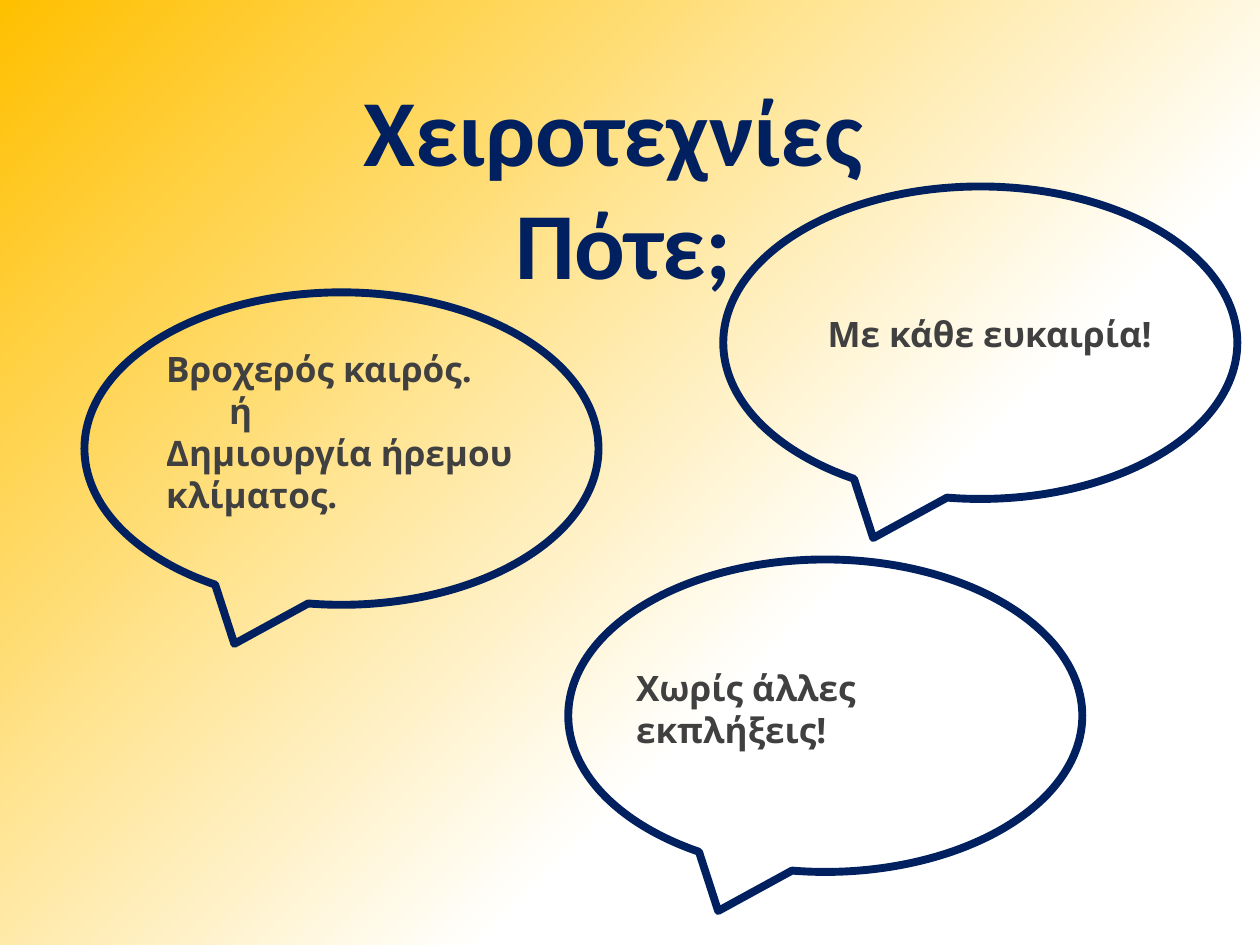
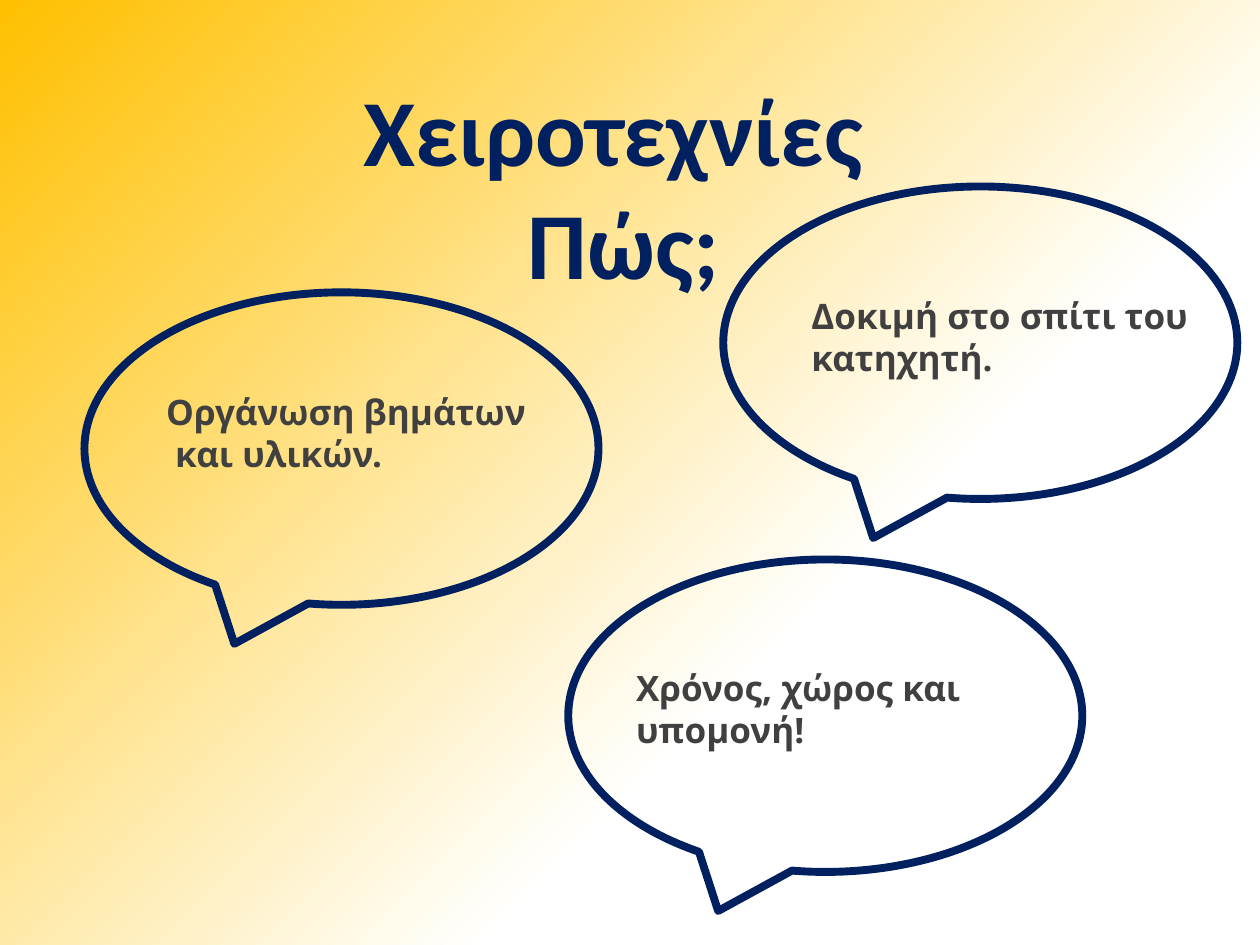
"""Builds two slides of speech bubbles on when and how to do crafts."""
from pptx import Presentation
from pptx.dml.color import RGBColor
from pptx.enum.shapes import MSO_SHAPE
from pptx.enum.text import MSO_ANCHOR, MSO_AUTO_SIZE, PP_ALIGN
from pptx.oxml import parse_xml
from pptx.oxml.ns import nsdecls, qn
from pptx.util import Inches, Pt

NAVY = RGBColor(0x00, 0x20, 0x60)
GREY = RGBColor(0x40, 0x40, 0x40)
WHITE = RGBColor(0xFF, 0xFF, 0xFF)
GOLD = RGBColor(0xFF, 0xC0, 0x00)

prs = Presentation()
prs.slide_width, prs.slide_height = Inches(10), Inches(7.5)
CELL = prs.slide_width / 100
BUBBLE_W, BUBBLE_H = 40.8, 24.8
TEXT_W, LINE_H = 35.2, 3.35
BUBBLES = [(57.4, 14.8), (6.7, 23.2), (45.1, 44.4)]

SLIDES = [
    ("Πότε;", [
        (7.3, 9.5, ["Με κάθε ευκαιρία!"], 1),
        (5.5, 3.9, ["Βροχερός καιρός.", "\tή", "Δημιουργία ήρεμου κλίματος."], 4),
        (4.4, 8, ["Χωρίς άλλες εκπλήξεις!"], 1),
    ]),
    ("Πώς;", [
        (6, 8.1, ["Δοκιμή στο σπίτι του κατηχητή."], 2),
        (5.5, 7.3, ["Οργάνωση βημάτων", " και υλικών."], 2),
        (4.4, 8, ["Χρόνος, χώρος και υπομονή!"], 2),
    ]),
]


def grid(*cells):
    return [round(c * CELL) for c in cells]


def write(sp, lines, font="Open Sans", size=20, color=GREY, align=PP_ALIGN.LEFT):
    tf = sp.text_frame
    tf.word_wrap = True
    tf.auto_size = MSO_AUTO_SIZE.SHAPE_TO_FIT_TEXT
    tf.vertical_anchor = MSO_ANCHOR.TOP
    for i, line in enumerate(lines):
        p = tf.add_paragraph() if i else tf.paragraphs[0]
        p.alignment = align
        r = p.add_run()
        r.text = line
        r.font.name, r.font.size, r.font.bold = font, Pt(size), True
        r.font.color.rgb = color


master = prs.slide_master
master.background.fill.solid()
stops = "".join(
    f'<a:gs pos="{pos * 1000}"><a:srgbClr val="{color}"/></a:gs>'
    for pos, color in [(0, WHITE), (35, WHITE), (100, GOLD)])
bg = master.element.find(".//" + qn("p:bgPr"))
bg.replace(bg[0], parse_xml(
    f'<a:gradFill {nsdecls("a")} rotWithShape="1"><a:gsLst>{stops}</a:gsLst>'
    '<a:path path="circle"><a:fillToRect l="100000" t="100000"/></a:path>'
    '</a:gradFill>'))

for question, answers in SLIDES:
    s = prs.slides.add_slide(prs.slide_layouts[5])
    title = s.shapes.title
    title.left, title.top, title.width, title.height = grid(24.5, 5.2, 50, 19.2)
    write(title, ["Χειροτεχνίες ", question], font="Calibri", size=54,
          color=NAVY, align=PP_ALIGN.CENTER)
    for (x, y), (dx, dy, lines, rows) in zip(BUBBLES, answers):
        group = s.shapes.add_group_shape()
        sp = group.shapes.add_shape(MSO_SHAPE.OVAL_CALLOUT,
                                    *grid(x, y, BUBBLE_W, BUBBLE_H))
        sp.shadow.inherit = False
        sp.fill.background()
        sp.line.color.rgb = NAVY
        sp.line.width = Pt(4.5)
        box = group.shapes.add_textbox(
            *grid(x + dx, y + dy, TEXT_W, 1 + rows * LINE_H))
        write(box, lines)

prs.save("out.pptx")
